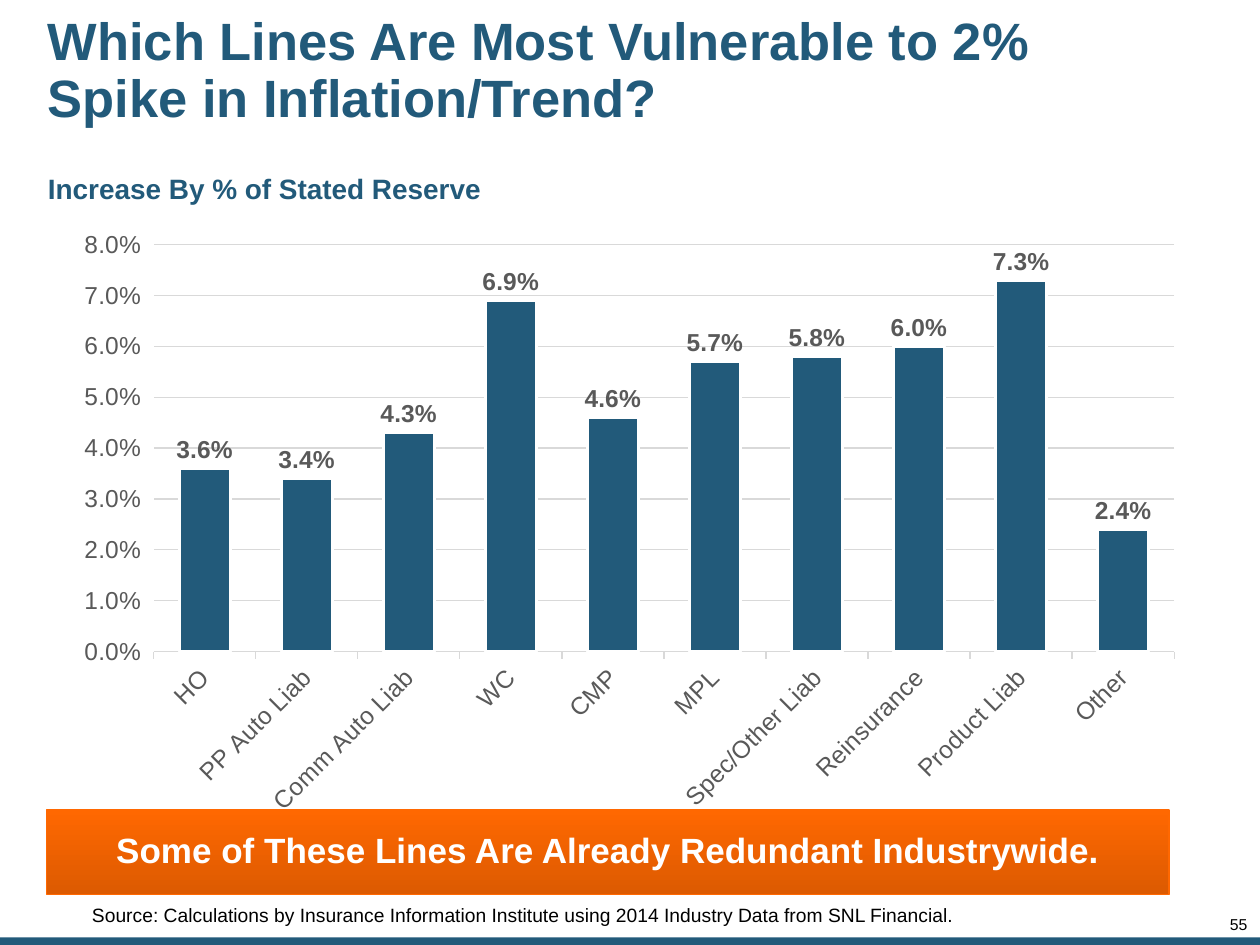
from dataclasses import dataclass

from lxml.etree import SubElement
from pptx import Presentation
from pptx.chart.data import CategoryChartData
from pptx.dml.color import RGBColor
from pptx.enum.chart import XL_CHART_TYPE, XL_LABEL_POSITION, XL_TICK_MARK
from pptx.enum.shapes import MSO_SHAPE
from pptx.enum.text import MSO_ANCHOR, PP_ALIGN
from pptx.oxml.ns import qn
from pptx.util import Inches, Pt


@dataclass(frozen=True)
class Theme:
    font: str = "Arial"
    blue: RGBColor = RGBColor(0x22, 0x5A, 0x7A)
    orange: RGBColor = RGBColor(0xFF, 0x68, 0x01)
    dark_orange: RGBColor = RGBColor(0xDC, 0x5A, 0x01)
    gray: RGBColor = RGBColor(0x59, 0x59, 0x59)
    grid: RGBColor = RGBColor(0xD9, 0xD9, 0xD9)
    white: RGBColor = RGBColor(0xFF, 0xFF, 0xFF)
    black: RGBColor = RGBColor(0, 0, 0)
    title: int = 30
    callout: int = 20
    subtitle: int = 16
    chart: int = 14
    source: int = 11
    number: int = 9


THEME = Theme()
RESERVE_INCREASE = {
    "HO": 0.036, "PP Auto Liab": 0.034, "Comm Auto Liab": 0.043, "WC": 0.069,
    "CMP": 0.046, "MPL": 0.057, "Spec/Other Liab": 0.058, "Reinsurance": 0.06,
    "Product Liab": 0.073, "Other": 0.024,
}


def set_font(font, size, color, bold=False):
    font.name, font.size, font.bold = THEME.font, Pt(size), bold
    font.color.rgb = color


def write(sp, text, size, color, bold=False, align=PP_ALIGN.LEFT,
          anchor=MSO_ANCHOR.TOP, spacing=0.9, insets=(0, 0, 0, 0)):
    """Fill a shape with one paragraph; insets run left, top, right, bottom."""
    tf = sp.text_frame
    tf.word_wrap = True
    tf.vertical_anchor = anchor
    (tf.margin_left, tf.margin_top,
     tf.margin_right, tf.margin_bottom) = map(Inches, insets)
    p = tf.paragraphs[0]
    p.alignment, p.line_spacing = align, spacing
    r = p.add_run()
    r.text = text
    set_font(r.font, size, color, bold)


def add_text(s, box, text, size, color, **style):
    write(s.shapes.add_textbox(*map(Inches, box)), text, size, color, **style)


def add_rectangle(s, box):
    sp = s.shapes.add_shape(MSO_SHAPE.RECTANGLE, *map(Inches, box))
    sp.shadow.inherit = False
    return sp


def add_callout(s, box, text):
    sp = add_rectangle(s, box)
    sp.fill.gradient()
    sp.fill.gradient_angle = 270
    colors = (THEME.orange, THEME.dark_orange)
    for position, (stop, color) in enumerate(zip(sp.fill.gradient_stops, colors)):
        stop.position, stop.color.rgb = position, color
    sp.line.color.rgb = THEME.orange
    sp.line.width = Pt(1)
    write(sp, text, THEME.callout, THEME.white, bold=True, align=PP_ALIGN.CENTER,
          anchor=MSO_ANCHOR.MIDDLE, spacing=0.95, insets=(0.1, 0.05, 0.1, 0.07))


def add_footer_bar(s, box):
    sp = add_rectangle(s, box)
    sp.fill.solid()
    sp.fill.fore_color.rgb = THEME.blue
    sp.line.fill.background()


def fix_plot_area(chart, x, y, w, h):
    """Pin the inner plot area, as fractions of the chart."""
    plot_area = chart._chartSpace.chart.plotArea
    for old in plot_area.findall(qn("c:layout")):
        plot_area.remove(old)
    layout = SubElement(plot_area, qn("c:layout"))
    plot_area.insert(0, layout)
    manual = SubElement(layout, qn("c:manualLayout"))
    settings = {"layoutTarget": "inner", "xMode": "edge", "yMode": "edge",
                "x": x, "y": y, "w": w, "h": h}
    for tag, value in settings.items():
        SubElement(manual, qn(f"c:{tag}")).set("val", str(value))


def style_axes(chart):
    cat, val = chart.category_axis, chart.value_axis
    for axis in (cat, val):
        axis.major_tick_mark = XL_TICK_MARK.OUTSIDE
        axis.minor_tick_mark = XL_TICK_MARK.NONE
        set_font(axis.tick_labels.font, THEME.chart, THEME.gray)
    val.minimum_scale, val.maximum_scale, val.major_unit = 0, 0.08, 0.01
    val.tick_labels.number_format = "0.0%"
    val.tick_labels.number_format_is_linked = False
    val.format.line.fill.background()
    val.has_major_gridlines = True
    for line in (cat.format.line, val.major_gridlines.format.line):
        line.color.rgb = THEME.grid
        line.width = Pt(0.75)
    body = cat._element.find(qn("c:txPr")).find(qn("a:bodyPr"))
    body.set("rot", "-2700000")
    body.set("vert", "horz")


def add_reserve_chart(s, box):
    data = CategoryChartData(number_format="0.0%")
    data.categories = list(RESERVE_INCREASE)
    data.add_series("Series 1", list(RESERVE_INCREASE.values()))
    chart = s.shapes.add_chart(XL_CHART_TYPE.COLUMN_CLUSTERED,
                               *map(Inches, box), data).chart
    chart.has_legend = chart.has_title = False
    set_font(chart.font, THEME.chart, THEME.gray)
    style_axes(chart)
    fix_plot_area(chart, 0.08, 0.04, 0.9, 0.67)

    plot = chart.plots[0]
    plot.gap_width, plot.vary_by_categories = 100, False
    bars = plot.series[0]
    bars.format.fill.solid()
    bars.format.fill.fore_color.rgb = THEME.blue
    bars.format.line.color.rgb = THEME.white
    bars.format.line.width = Pt(1.5)
    labels = bars.data_labels
    labels.show_value = True
    labels.position = XL_LABEL_POSITION.OUTSIDE_END
    labels.number_format, labels.number_format_is_linked = "0.0%", False
    set_font(labels.font, THEME.chart, THEME.gray, bold=True)


def build_slide(prs):
    s = prs.slides.add_slide(prs.slide_layouts[6])
    add_footer_bar(s, (0, 7.44, 10, 0.06))
    add_text(s, (0.33, 0.1, 8.09, 0.94),
             "Which Lines Are Most Vulnerable to 2% Spike in Inflation/Trend?",
             THEME.title, THEME.blue, bold=True, anchor=MSO_ANCHOR.MIDDLE,
             insets=(0.05,) * 4)
    add_reserve_chart(s, (0.5, 1.75, 9, 4.82))
    add_text(s, (9.41, 7.28, 0.49, 0.13), "55", THEME.number, THEME.black,
             align=PP_ALIGN.RIGHT, spacing=0.85)
    add_text(s, (0.38, 1.39, 8.99, 0.24), "Increase By % of Stated Reserve",
             THEME.subtitle, THEME.blue, bold=True)
    add_text(s, (0.33, 6.99, 8.81, 0.51),
             "Source: Calculations by Insurance Information Institute using "
             "2014 Industry Data from SNL Financial.",
             THEME.source, THEME.black, anchor=MSO_ANCHOR.BOTTOM, spacing=0.85,
             insets=(0.4, 0, 0, 0.15))
    add_callout(s, (0.37, 6.43, 8.91, 0.67),
                "Some of These Lines Are Already Redundant Industrywide.")


def main():
    prs = Presentation()
    prs.slide_width, prs.slide_height = Inches(10), Inches(7.5)
    build_slide(prs)
    prs.save("out.pptx")


if __name__ == "__main__":
    main()
